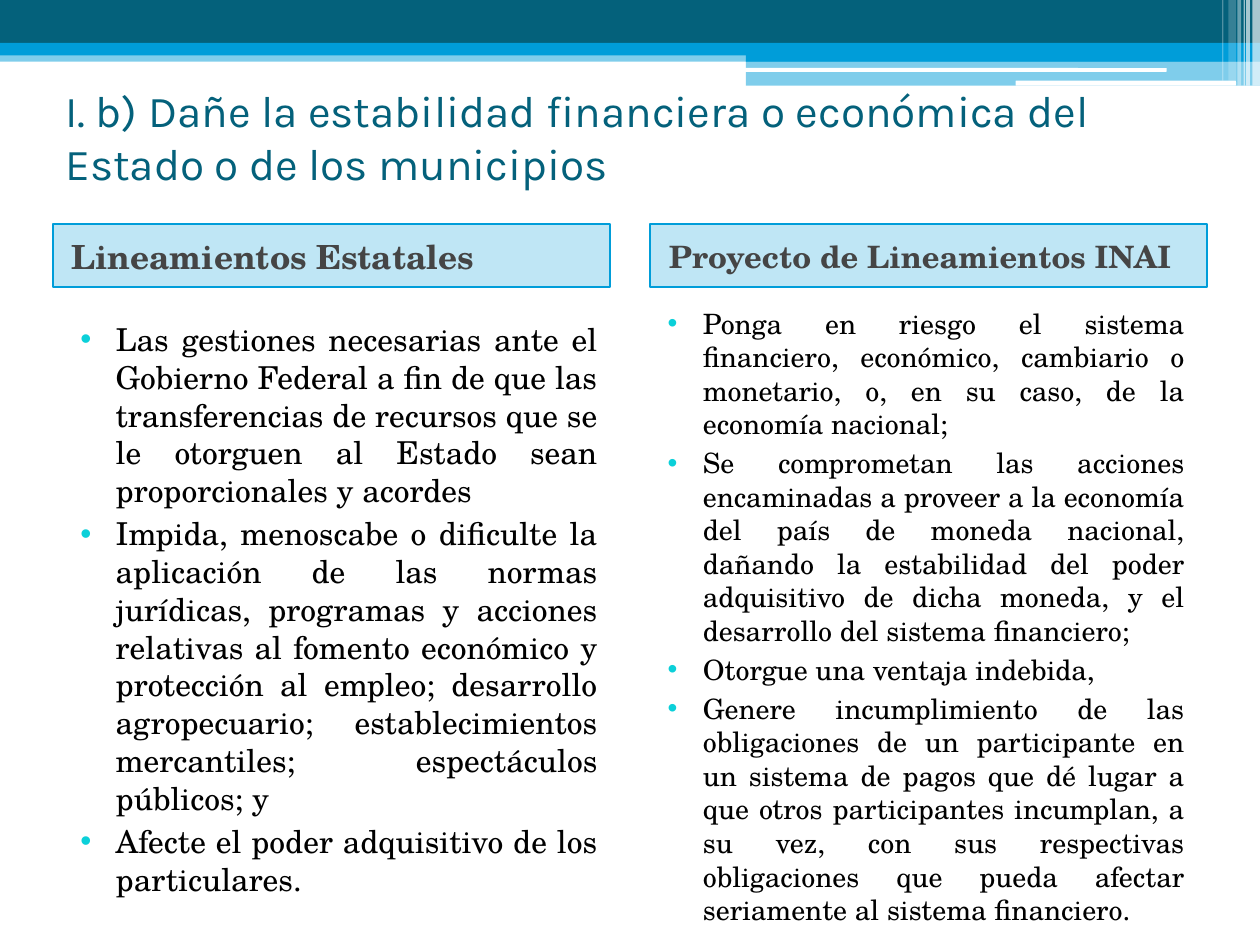
from typing import NamedTuple

from lxml.etree import SubElement
from pptx import Presentation
from pptx.dml.color import RGBColor
from pptx.enum.shapes import MSO_SHAPE
from pptx.enum.text import MSO_ANCHOR, PP_ALIGN
from pptx.oxml.ns import qn
from pptx.util import Inches, Pt

NAVY, BLUE, WHITE = "04617B", "009DD9", "FFFFFF"
GREY, BLACK, AQUA = "454545", "000000", "0BD0D9"
SANS, SERIF = "Karla", "TeX Gyre Schola"


class Box(NamedTuple):
    left: float
    top: float
    width: float
    height: float


class Band(NamedTuple):
    box: Box
    color: str
    alpha: int = 100
    kind: int = MSO_SHAPE.RECTANGLE


class Column(NamedTuple):
    head_box: Box
    head: str
    head_size: float
    body_box: Box
    body_size: float
    items: list[str]


ROUND = MSO_SHAPE.ROUNDED_RECTANGLE
BANDS = [
    Band(Box(0, 0.4, 10, 0.09), BLUE, 50),
    Band(Box(0, 0, 10, 0.34), NAVY),
    Band(Box(0, 0.34, 10, 0.1), BLUE),
    Band(Box(5.92, 0.39, 4.08, 0.1), BLUE),
    Band(Box(5.92, 0.48, 4.08, 0.2), BLUE, 50),
    Band(Box(5.91, 0.54, 3.35, 0.03), WHITE, kind=ROUND),
    Band(Box(8.06, 0.64, 1.75, 0.04), WHITE, kind=ROUND),
    Band(Box(9.94, 0, 0.06, 0.68), WHITE, 65),
    Band(Box(9.89, 0, 0.03, 0.68), WHITE, 65),
    Band(Box(9.87, 0, 0.01, 0.68), WHITE, 60),
    Band(Box(9.82, 0, 0.03, 0.68), WHITE, 40),
    Band(Box(9.75, 0, 0.06, 0.64), WHITE, 20),
    Band(Box(9.7, 0, 0.01, 0.64), WHITE, 30),
]

COLUMNS = [
    Column(
        Box(0.42, 1.78, 4.42, 0.5), "Lineamientos Estatales", 19,
        Box(0.42, 2.49, 4.42, 4.72), 18,
        [
            "Las gestiones necesarias ante el Gobierno Federal a fin de que las "
            "transferencias de recursos que se le otorguen al Estado sean "
            "proporcionales y acordes",
            "Impida, menoscabe o dificulte la aplicación de las normas jurídicas, "
            "programas y acciones relativas al fomento económico y protección al "
            "empleo; desarrollo agropecuario; establecimientos mercantiles; "
            "espectáculos públicos; y",
            "Afecte el poder adquisitivo de los particulares.",
        ],
    ),
    Column(
        Box(5.16, 1.78, 4.42, 0.5), "Proyecto de Lineamientos INAI", 17.6,
        Box(5.08, 2.38, 4.42, 4.92), 16,
        [
            "Ponga en riesgo el sistema financiero, económico, cambiario o "
            "monetario, o, en su caso, de la economía nacional;",
            "Se comprometan las acciones encaminadas a proveer a la economía del "
            "país de moneda nacional, dañando la estabilidad del poder adquisitivo "
            "de dicha moneda, y el desarrollo del sistema financiero;",
            "Otorgue una ventaja indebida,",
            "Genere incumplimiento de las obligaciones de un participante en un "
            "sistema de pagos que dé lugar a que otros participantes incumplan, a "
            "su vez, con sus respectivas obligaciones que pueda afectar seriamente "
            "al sistema financiero.",
        ],
    ),
]


def paint(target, color: str) -> None:
    """Give a fill or a font one solid colour."""
    if hasattr(target, "solid"):
        target.solid()
        target.fore_color.rgb = RGBColor.from_string(color)
    else:
        target.color.rgb = RGBColor.from_string(color)


def place(box: Box) -> list[int]:
    return [Inches(side) for side in box]


def draw_band(slide, band: Band):
    shape = slide.shapes.add_shape(band.kind, *place(band.box))
    shape.shadow.inherit = False
    shape.line.fill.background()
    paint(shape.fill, band.color)
    if band.alpha < 100:
        tint = shape.fill._xPr.find(qn("a:solidFill"))[0]
        SubElement(tint, qn("a:alpha"), val=str(band.alpha * 1000))
    return shape


def write(para, text: str, face: str, size: float, color: str) -> None:
    para.text = text
    para.alignment = PP_ALIGN.LEFT
    para.font.name = face
    para.font.size = Pt(size)
    paint(para.font, color)


def indent(para, left: float, first: float = 0) -> None:
    props = para._p.get_or_add_pPr()
    props.set("marL", str(Inches(left)))
    props.set("indent", str(Inches(first)))
    para.space_before = Pt(3)


def add_bullet(para) -> None:
    props = para._p.get_or_add_pPr()
    # Bullet colour, font and sign must come before the default run settings.
    tail = props.find(qn("a:defRPr"))
    tint = SubElement(props, qn("a:buClr"))
    SubElement(tint, qn("a:srgbClr"), val=AQUA)
    face = SubElement(props, qn("a:buFont"), typeface="Arial")
    sign = SubElement(props, qn("a:buChar"), char="•")
    if tail is not None:
        for item in (tint, face, sign):
            tail.addprevious(item)


def add_text(slide, box: Box, anchor):
    frame = slide.shapes.add_textbox(*place(box)).text_frame
    frame.word_wrap = True
    frame.vertical_anchor = anchor
    return frame


def draw_head(slide, col: Column) -> None:
    shape = draw_band(slide, Band(col.head_box, BLUE, 25))
    paint(shape.line.fill, BLUE)
    shape.line.width = Pt(1)
    frame = shape.text_frame
    frame.word_wrap = True
    frame.vertical_anchor = MSO_ANCHOR.MIDDLE
    para = frame.paragraphs[0]
    write(para, col.head, SERIF, col.head_size, GREY)
    para.font.bold = True
    indent(para, 0.05)


def draw_body(slide, col: Column) -> None:
    frame = add_text(slide, col.body_box, MSO_ANCHOR.TOP)
    for rank, item in enumerate(col.items):
        para = frame.add_paragraph() if rank else frame.paragraphs[0]
        write(para, item, SERIF, col.body_size, BLACK)
        para.alignment = PP_ALIGN.JUSTIFY
        indent(para, 0.4, -0.28)
        add_bullet(para)


def main() -> None:
    deck = Presentation()
    deck.slide_width, deck.slide_height = Inches(10), Inches(7.5)
    slide = deck.slides.add_slide(deck.slide_layouts[6])
    for band in BANDS:
        draw_band(slide, band)
    title = add_text(slide, Box(0.42, 0.7, 9.17, 0.77), MSO_ANCHOR.MIDDLE)
    write(
        title.paragraphs[0],
        "I. b) Dañe la estabilidad financiera o económica del Estado o de los municipios",
        SANS, 25.2, NAVY,
    )
    for col in COLUMNS:
        draw_head(slide, col)
        draw_body(slide, col)
    deck.save("out.pptx")


if __name__ == "__main__":
    main()
